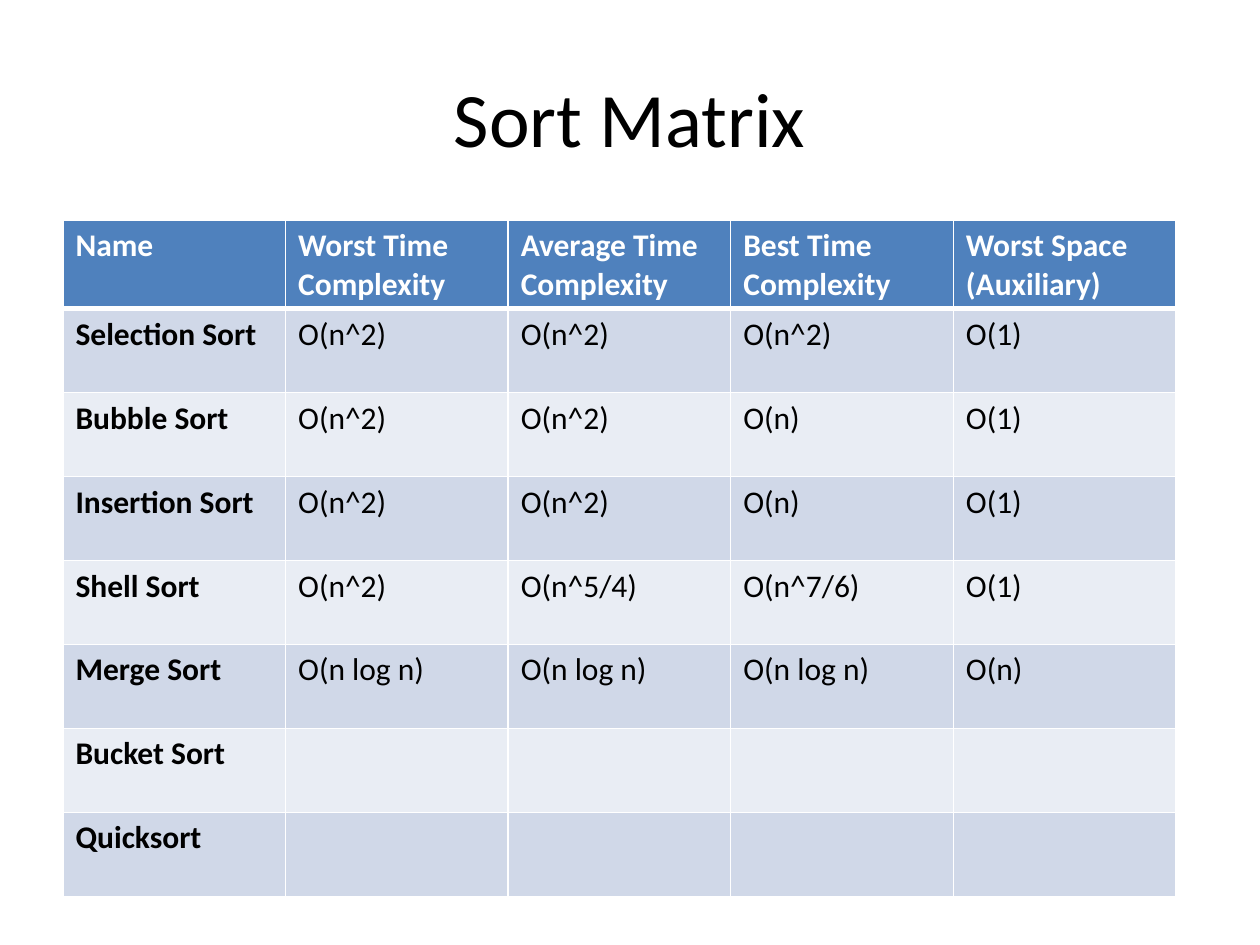
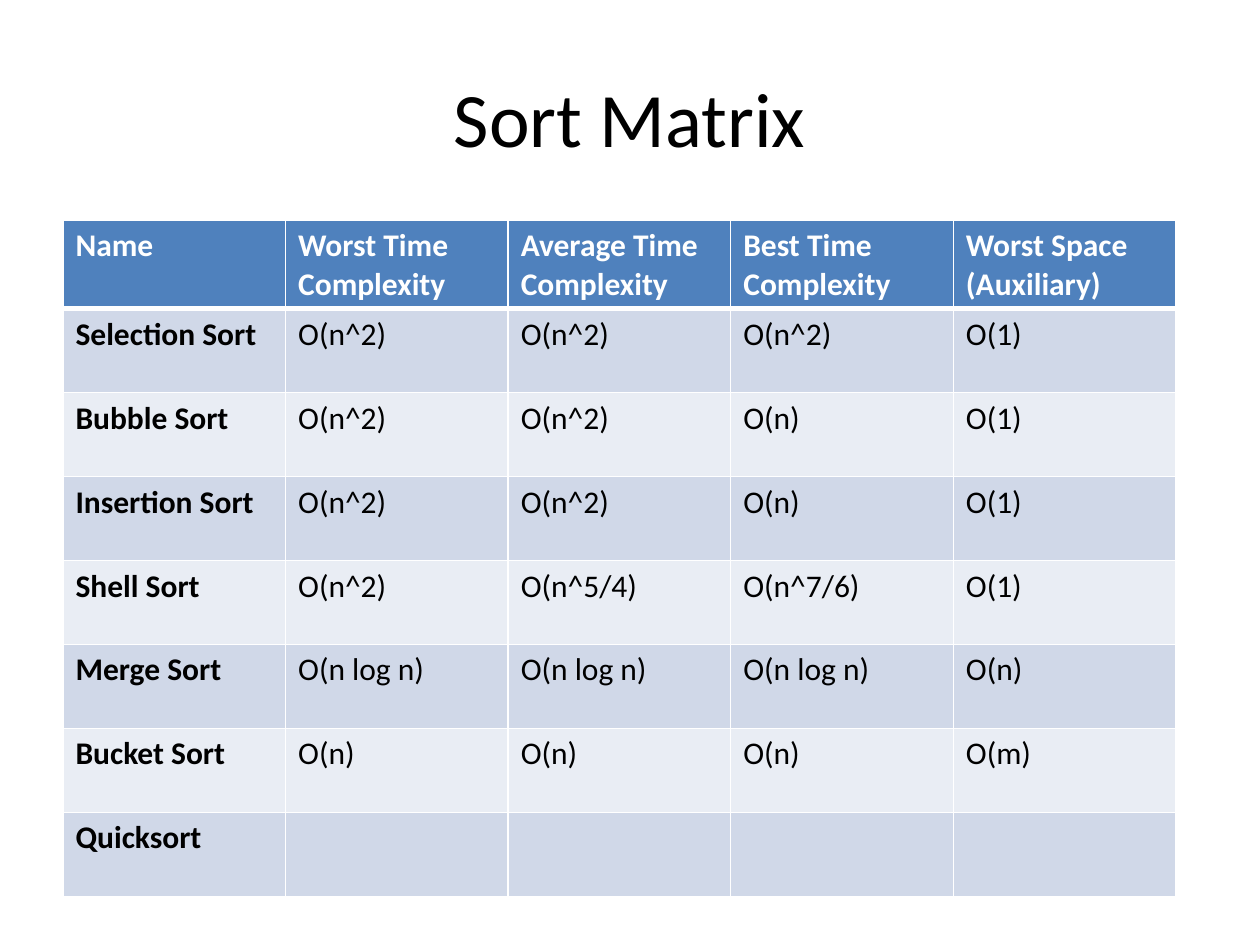
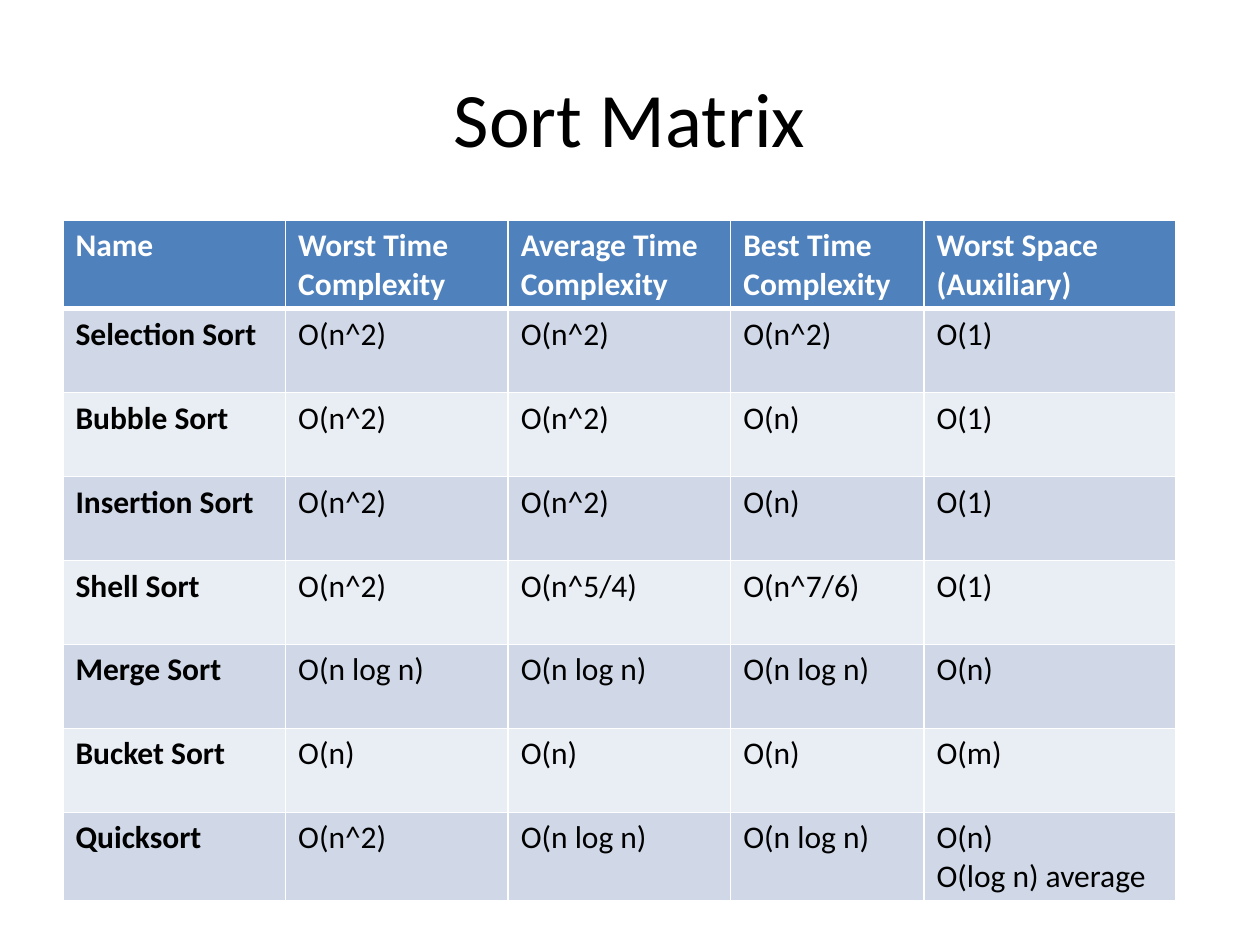
from lxml.etree import SubElement
from pptx import Presentation
from pptx.dml.color import RGBColor
from pptx.enum.text import MSO_ANCHOR as Anchor, PP_ALIGN as Align
from pptx.oxml.ns import qn
from pptx.util import Inches, Pt

COLORS = {
    "text": "000000",
    "white": "FFFFFF",
    "header": "4F81BD",
    "odd_row": "D0D8E8",
    "even_row": "E9EDF4",
}
FONT = "Calibri"

# Sort data
HEADINGS = ["Name", "Worst Time Complexity", "Average Time Complexity",
            "Best Time Complexity", "Worst Space (Auxiliary)"]
SORTS = [
    ["Selection Sort", "O(n^2)", "O(n^2)", "O(n^2)", "O(1)"],
    ["Bubble Sort", "O(n^2)", "O(n^2)", "O(n)", "O(1)"],
    ["Insertion Sort", "O(n^2)", "O(n^2)", "O(n)", "O(1)"],
    ["Shell Sort", "O(n^2)", "O(n^5/4)", "O(n^7/6)", "O(1)"],
    ["Merge Sort", "O(n log n)", "O(n log n)", "O(n log n)", "O(n)"],
    ["Bucket Sort", "O(n)", "O(n)", "O(n)", "O(m)"],
    ["Quicksort", "O(n^2)", "O(n log n)", "O(n log n)", "O(n)\nO(log n) average"],
]

# Column widths in grid units
EQUAL_WIDTHS = [10.6] * 5
WIDE_SPACE_WIDTHS = [10.6, 10.6, 10.6, 9.2, 12]


def grid(units):
    """Length on a grid of 60 columns by 45 rows."""
    return Inches(units / 6)


class Deck:
    def __init__(self):
        self.presentation = Presentation()
        self.presentation.slide_width = grid(60)
        self.presentation.slide_height = grid(45)
        self.slide = None

    def add_slide(self):
        layout = self.presentation.slide_layouts[6]
        self.slide = self.presentation.slides.add_slide(layout)

    def style_text(self, frame, size, color, bold=False, align=Align.LEFT):
        for paragraph in frame.paragraphs:
            paragraph.alignment = align
            font = paragraph.font
            font.name, font.size, font.bold = FONT, Pt(size), bold
            font.color.rgb = RGBColor.from_string(COLORS[color])

    def title(self, text):
        box = self.slide.shapes.add_textbox(grid(3), grid(1.8), grid(54), grid(7.5))
        frame = box.text_frame
        frame.word_wrap = True
        frame.vertical_anchor = Anchor.MIDDLE
        frame.text = text
        self.style_text(frame, 44, "text", align=Align.CENTER)

    def borders(self, cell, top, bottom):
        properties = cell._tc.get_or_add_tcPr()
        for side, width in (("L", 1), ("R", 1), ("T", top), ("B", bottom)):
            line = SubElement(properties, qn(f"a:ln{side}"), w=str(Pt(width)))
            fill = SubElement(line, qn("a:solidFill"))
            SubElement(fill, qn("a:srgbClr"), val=COLORS["white"])

    def cell(self, cell, text, row, column):
        is_header = row == 0
        fill = "header" if is_header else "odd_row" if row % 2 else "even_row"
        cell.text = text
        self.style_text(cell.text_frame, 18, "white" if is_header else "text",
                        bold=is_header or column == 0)
        # The rule under the header is thicker than the others
        self.borders(cell, top=3 if row == 1 else 1, bottom=3 if is_header else 1)
        cell.fill.solid()
        cell.fill.fore_color.rgb = RGBColor.from_string(COLORS[fill])

    def table(self, rows, widths):
        row_height = 4
        frame = self.slide.shapes.add_table(
            len(rows), len(widths), grid(3), grid(10.5),
            grid(sum(widths)), grid(row_height * len(rows)))
        table = frame.table
        for column, width in zip(table.columns, widths):
            column.width = grid(width)
        for row, texts in enumerate(rows):
            table.rows[row].height = grid(row_height)
            for column, text in enumerate(texts):
                self.cell(table.cell(row, column), text, row, column)


def sort_matrix(deck, solved, widths):
    """Add a matrix in which only the first solved sorts show their costs."""
    rows = [sort if index < solved else [sort[0]] + [""] * (len(sort) - 1)
            for index, sort in enumerate(SORTS)]
    deck.add_slide()
    deck.title("Sort Matrix")
    deck.table([HEADINGS] + rows, widths)


def main():
    deck = Deck()
    sort_matrix(deck, 5, EQUAL_WIDTHS)
    sort_matrix(deck, 6, EQUAL_WIDTHS)
    sort_matrix(deck, 7, WIDE_SPACE_WIDTHS)
    deck.presentation.save("out.pptx")


if __name__ == "__main__":
    main()
